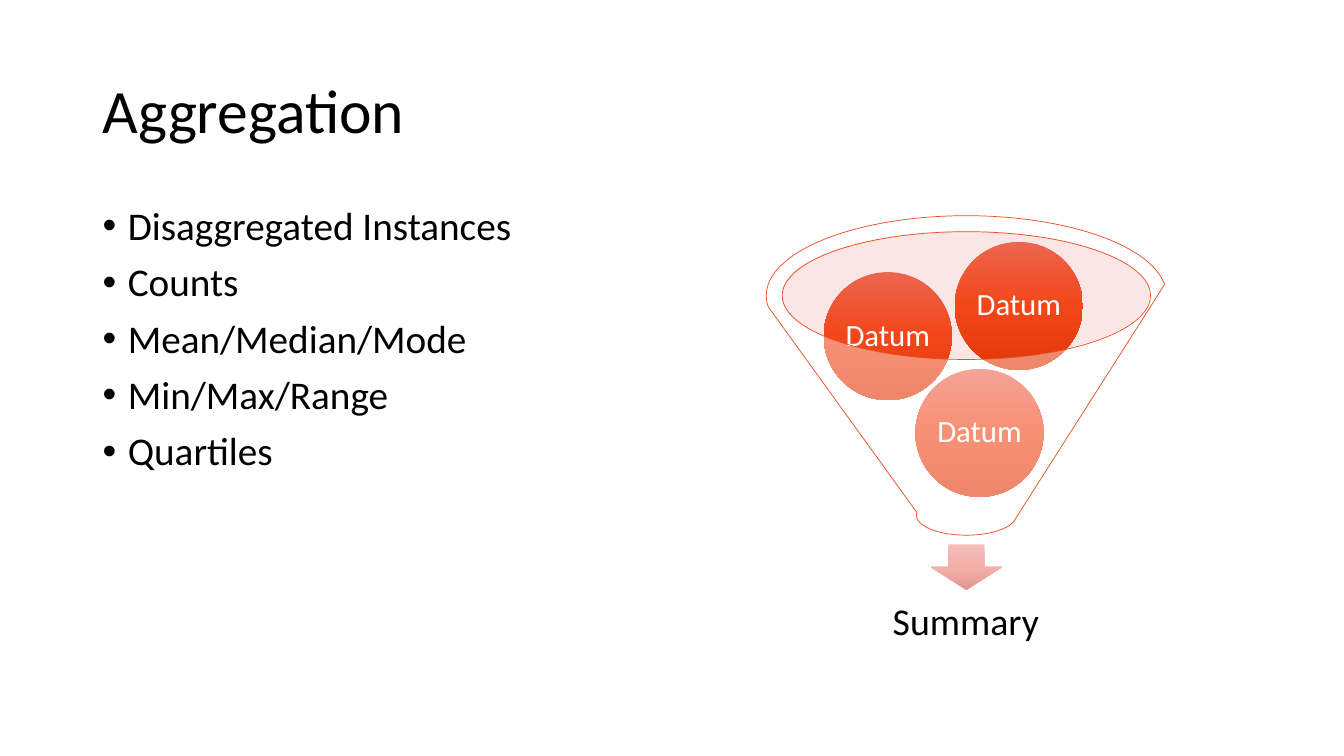
from pptx import Presentation
from pptx.dml.color import RGBColor
from pptx.enum import shapes, text
from pptx.oxml import ns
from pptx.util import Inches, Pt
from lxml import etree

TITLE = "Aggregation"
BULLETS = ["Disaggregated Instances", "Counts", "Mean/Median/Mode",
           "Min/Max/Range", "Quartiles"]
RESULT = "Summary"
DATUM_SIZE = 1.27
DATA = [("Datum", 9.08, 3.66), ("Datum", 8.17, 2.7), ("Datum", 9.47, 2.4)]

FONT = "Calibri"
COLORS = {"ink": "000000", "white": "FFFFFF", "rim": "F4C2BD", "outline": "E84C22"}
ARROW_GRADIENT = ["F4BDB8", "F5AFA9", "DF9791"]
DATUM_GRADIENT = ["ED6650", "F24618", "E2380A"]
SHAPE = shapes.MSO_SHAPE


def rgb(name):
    return RGBColor.from_string(COLORS[name])


def place(sp, left, top, width, height):
    sp.left, sp.top = Inches(left), Inches(top)
    sp.width, sp.height = Inches(width), Inches(height)


def write(sp, lines, size, color, align, anchor, inset=(0.1, 0.05), wrap=True, before=0):
    tf = sp.text_frame
    tf.text = "\n".join(lines)
    tf.word_wrap = wrap
    tf.auto_size = text.MSO_AUTO_SIZE.NONE
    tf.vertical_anchor = anchor
    tf.margin_left = tf.margin_right = Inches(inset[0])
    tf.margin_top = tf.margin_bottom = Inches(inset[1])
    for p in tf.paragraphs:
        p.alignment = align
        p.line_spacing = 0.9
        p.space_before = Pt(before)
        font = p.runs[0].font
        font.name, font.size = FONT, Pt(size)
        font.color.rgb = rgb(color)


def add_bullets(tf):
    for p in tf.paragraphs:
        pPr = p._p.get_or_add_pPr()
        pPr.set("marL", str(Inches(0.25)))
        pPr.set("indent", str(Inches(-0.25)))
        etree.SubElement(pPr, ns.qn("a:buFont")).set("typeface", "Arial")
        etree.SubElement(pPr, ns.qn("a:buChar")).set("char", "•")


def add_part(slide, kind, left, top, width, height):
    """Add a preset shape without shadow or outline."""
    sp = slide.shapes.add_shape(kind, *map(Inches, (left, top, width, height)))
    sp.shadow.inherit = False
    sp.line.fill.background()
    return sp


def fill_translucent(sp, color, percent):
    sp.fill.solid()
    sp.fill.fore_color.rgb = rgb(color)
    clr = sp._element.spPr.find(ns.qn("a:solidFill"))[0]
    etree.SubElement(clr, ns.qn("a:alpha")).set("val", str(percent * 1000))


def fill_downward(sp, colors):
    """Fill with evenly spaced gradient stops, top to bottom."""
    sp.fill.gradient()
    sp.fill.gradient_angle = 270
    stops = sp._element.spPr.find(".//" + ns.qn("a:gsLst"))
    for old in list(stops):
        stops.remove(old)
    for i, color in enumerate(colors):
        gs = etree.SubElement(stops, ns.qn("a:gs"))
        gs.set("pos", str(100000 * i // (len(colors) - 1)))
        etree.SubElement(gs, ns.qn("a:srgbClr")).set("val", color)


def main():
    prs = Presentation()
    prs.slide_width, prs.slide_height = Inches(13.33), Inches(7.5)
    slide = prs.slides.add_slide(prs.slide_layouts[5])
    left, center = text.PP_ALIGN.LEFT, text.PP_ALIGN.CENTER
    top, middle = text.MSO_ANCHOR.TOP, text.MSO_ANCHOR.MIDDLE

    title = slide.shapes.title
    place(title, 0.92, 0.4, 11.5, 1.45)
    write(title, [TITLE], 44, "ink", left, middle)

    body = slide.shapes.add_textbox(*map(Inches, (0.92, 2, 5.67, 4.76)))
    write(body, BULLETS, 28, "ink", left, top, before=10)
    add_bullets(body.text_frame)

    rim = add_part(slide, SHAPE.OVAL, 7.75, 2.29, 3.65, 1.27)
    fill_translucent(rim, "rim", 40)

    arrow = add_part(slide, SHAPE.DOWN_ARROW, 9.23, 5.4, 0.71, 0.45)
    fill_downward(arrow, ARROW_GRADIENT)

    summary = slide.shapes.add_textbox(*map(Inches, (7.88, 5.76, 3.4, 0.85)))
    write(summary, [RESULT], 27, "ink", center, middle, inset=(0.21, 0.21))

    for label, x, y in DATA:
        datum = add_part(slide, SHAPE.OVAL, x, y, DATUM_SIZE, DATUM_SIZE)
        fill_downward(datum, DATUM_GRADIENT)
        write(datum, [label], 22, "white", center, middle, inset=(0.03, 0.03), wrap=False)

    funnel = add_part(slide, SHAPE.FUNNEL, 7.6, 2.14, 3.97, 3.17)
    fill_translucent(funnel, "white", 40)
    funnel.line.color.rgb = rgb("outline")
    funnel.line.width = Pt(0.5)

    prs.save("out.pptx")


if __name__ == "__main__":
    main()
